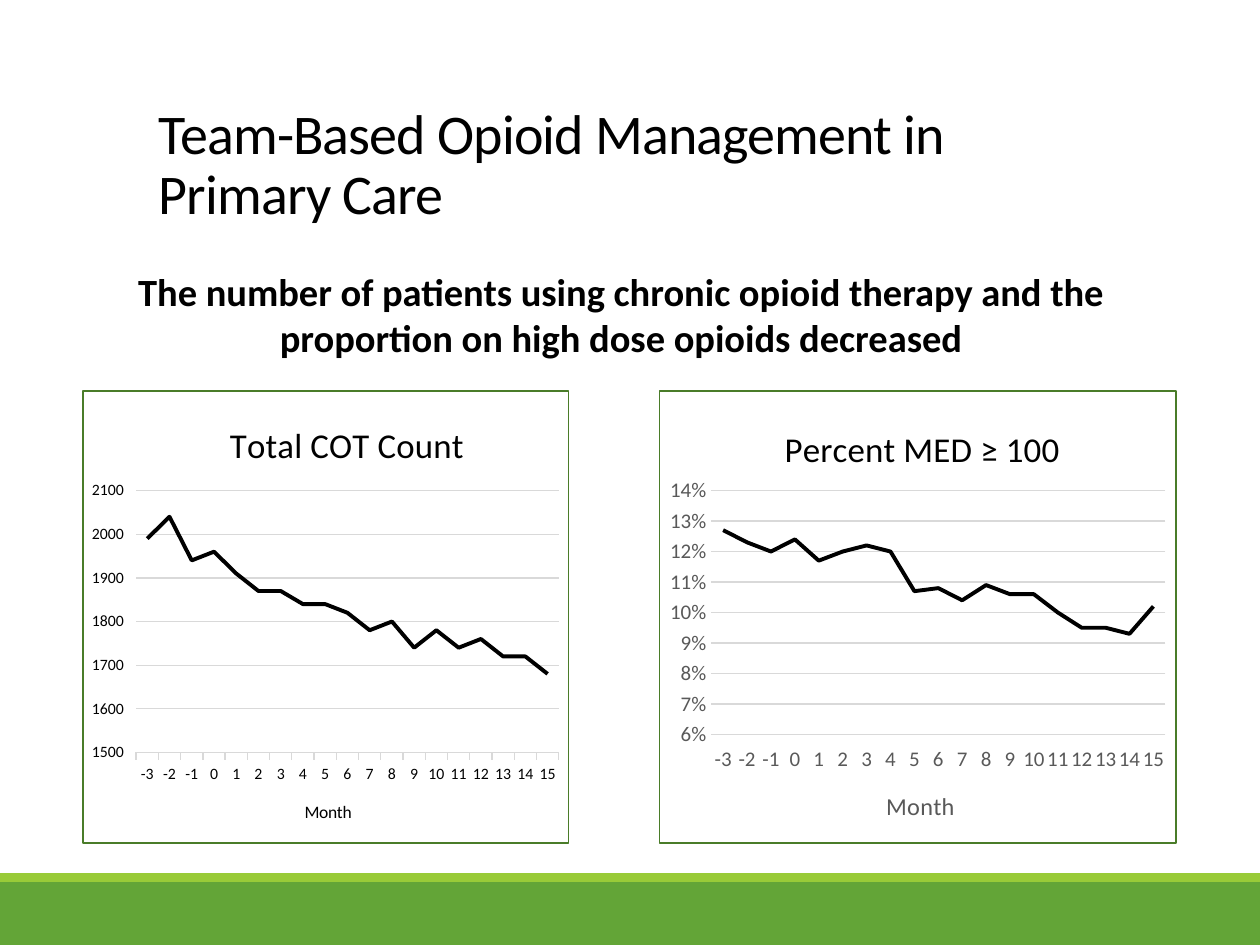
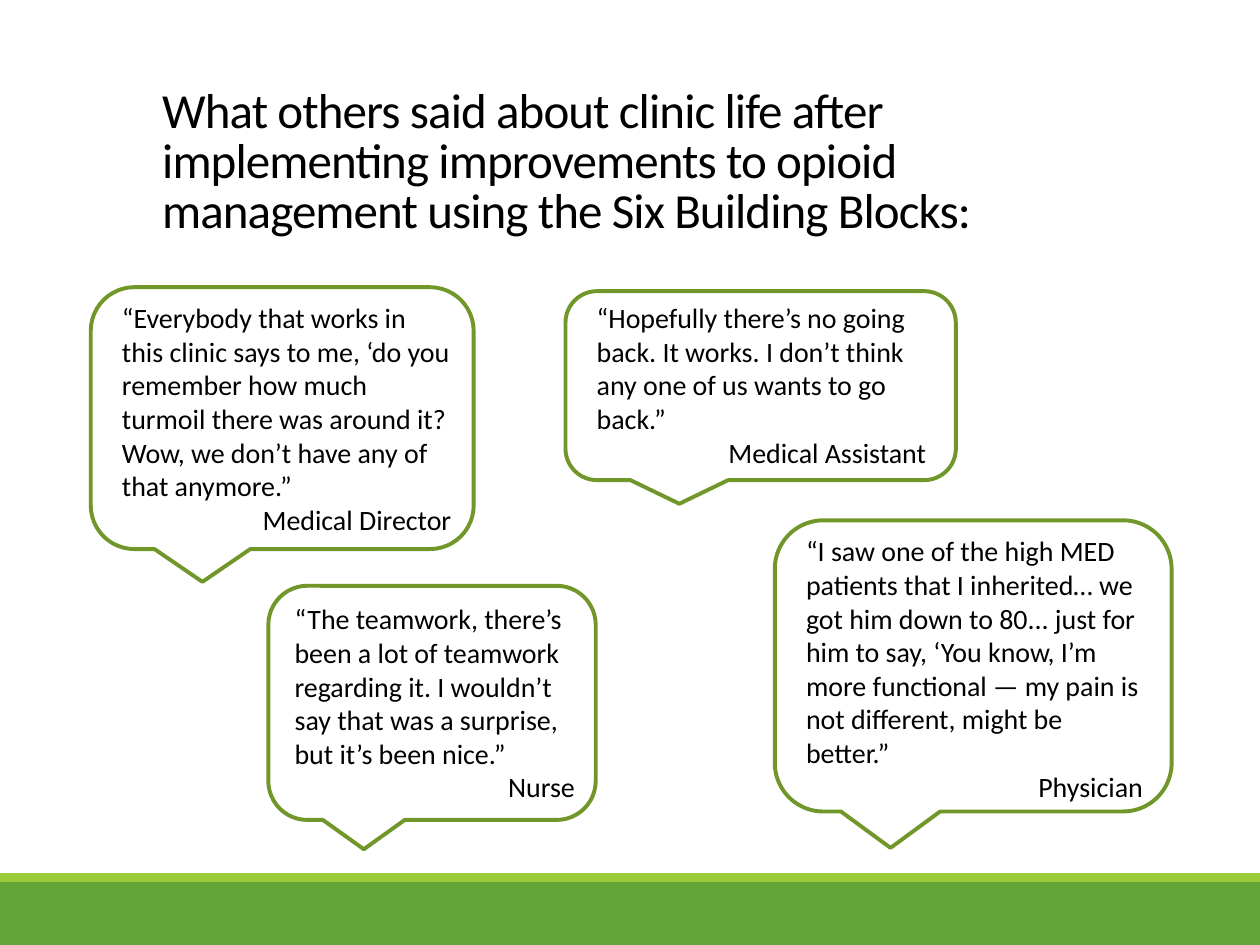
from dataclasses import dataclass

from lxml import etree
from pptx import Presentation
from pptx import util as u
from pptx.chart.data import CategoryChartData
from pptx.dml.color import RGBColor
from pptx.enum import chart as chart_enum
from pptx.enum import shapes, text
from pptx.oxml.ns import nsdecls, qn


class Theme:
    font = "Calibri"
    ink = RGBColor.from_string("000000")
    gray = RGBColor.from_string("595959")
    grid = RGBColor.from_string("D9D9D9")
    band = RGBColor.from_string("63A537")
    strip = RGBColor.from_string("99CB38")
    callout = RGBColor.from_string("719629")
    chart_border = "4A7C29"
    chart_fill = "FFFFFF"
    title_size, long_title_size = 32, 28
    subtitle_size, quote_size = 22, 16
    chart_title_size, chart_size = 20, 10


@dataclass
class Box:
    """A region in centimetres."""
    left: float
    top: float
    width: float
    height: float

    def lengths(self):
        return [u.Cm(v) for v in (self.left, self.top, self.width, self.height)]


@dataclass
class LineChart:
    title: str
    values: list
    low: float
    high: float
    step: float
    number_format: str
    label_size: int
    label_color: RGBColor
    axis_title_size: int
    tick: chart_enum.XL_TICK_MARK
    plot_layout: tuple
    title_layout: tuple
    month_layout: tuple


@dataclass
class Quote:
    words: str
    speaker: str
    box: Box
    inset: tuple
    text_width: float


SLIDE = Box(0, 0, 25.4, 19.05)
MONTHS = [str(month) for month in range(-3, 16)]


def style_font(font, size, color=Theme.ink, bold=False):
    font.name, font.size, font.bold = Theme.font, u.Pt(size), bold
    font.color.rgb = color


def add_text(slide, box, lines, size, bold=False):
    """Text box with one paragraph per (words, alignment) pair."""
    shape = slide.shapes.add_textbox(*box.lengths())
    frame = shape.text_frame
    frame.word_wrap = True
    for index, (words, alignment) in enumerate(lines):
        paragraph = frame.add_paragraph() if index else frame.paragraphs[0]
        paragraph.text = words
        paragraph.alignment = alignment
        style_font(paragraph.font, size, bold=bold)
    return frame


def add_title(slide, box, words, size, spacing, margins):
    frame = add_text(slide, box, [(words, text.PP_ALIGN.LEFT)], size)
    frame.vertical_anchor = text.MSO_ANCHOR.BOTTOM
    frame.margin_left, frame.margin_right = [u.Cm(m) for m in margins]
    paragraph = frame.paragraphs[0]
    paragraph.line_spacing = spacing
    paragraph.font._rPr.set("spc", "-50")  # tightened letters


def add_bands(slide, box):
    """Green footer with a lighter strip on top of it."""
    band_height, strip_height = 1.27, 0.18
    band_top = box.top + box.height - band_height
    for top, height, color in ((band_top, band_height, Theme.band),
                               (band_top - strip_height, strip_height, Theme.strip)):
        part = Box(box.left, top, box.width, height)
        shape = slide.shapes.add_shape(shapes.MSO_SHAPE.RECTANGLE, *part.lengths())
        shape.shadow.inherit = False
        shape.fill.solid()
        shape.fill.fore_color.rgb = color
        shape.line.fill.background()


def set_layout(element, index, fractions, inner=False):
    """Fix a chart part at fractions of the chart: x, y and maybe w, h."""
    for old in element.findall(qn("c:layout")):
        element.remove(old)
    target = '<c:layoutTarget val="inner"/>' if inner else ""
    modes = "".join(f'<c:{name}Mode val="edge"/>' for name in "xy")
    sizes = "".join(f'<c:{name} val="{v}"/>' for name, v in zip("xywh", fractions))
    element.insert(index, etree.fromstring(
        f'<c:layout {nsdecls("c")}><c:manualLayout>{target}{modes}{sizes}'
        '</c:manualLayout></c:layout>'))


def set_chart_title(title, words, size, color, layout):
    paragraph = title.text_frame.paragraphs[0]
    paragraph.text = words
    style_font(paragraph.font, size, color)
    set_layout(title.element, 1, layout)


def frame_chart(chart):
    """White background and green border of the whole chart."""
    chart.element.find(qn("c:chart")).addnext(etree.fromstring(
        f'<c:spPr {nsdecls("c", "a")}>'
        f'<a:solidFill><a:srgbClr val="{Theme.chart_fill}"/></a:solidFill>'
        f'<a:ln w="12700"><a:solidFill><a:srgbClr val="{Theme.chart_border}"/>'
        '</a:solidFill></a:ln></c:spPr>'))


def add_line_chart(slide, box, content):
    data = CategoryChartData()
    data.categories = MONTHS
    data.add_series("Series 1", content.values)
    chart = slide.shapes.add_chart(
        chart_enum.XL_CHART_TYPE.LINE, *box.lengths(), data).chart
    style_font(chart.font, Theme.chart_size)
    frame_chart(chart)
    chart.has_legend = False
    chart.has_title = True
    set_chart_title(chart.chart_title, content.title, Theme.chart_title_size,
                    Theme.ink, content.title_layout)
    set_layout(chart.element.find(".//" + qn("c:plotArea")), 0,
               content.plot_layout, inner=True)

    # Line
    plot = chart.plots[0]
    plot.vary_by_categories = False
    series = plot.series[0]
    series.smooth = False
    series.marker.style = chart_enum.XL_MARKER_STYLE.NONE
    series.format.line.color.rgb = Theme.ink
    series.format.line.width = u.Pt(2.25)

    # Axes
    months, values = chart.category_axis, chart.value_axis
    for axis in (months, values):
        style_font(axis.tick_labels.font, content.label_size, content.label_color)
        axis.major_tick_mark = content.tick
        axis.minor_tick_mark = chart_enum.XL_TICK_MARK.NONE
    months.tick_label_position = chart_enum.XL_TICK_LABEL_POSITION.LOW
    months.has_title = True
    set_chart_title(months.axis_title, "Month", content.axis_title_size,
                    content.label_color, content.month_layout)
    values.minimum_scale, values.maximum_scale = content.low, content.high
    values.major_unit = content.step
    values.tick_labels.number_format = content.number_format
    values.tick_labels.number_format_is_linked = False
    values.has_major_gridlines = True
    for line in (months.format.line, values.major_gridlines.format.line):
        line.color.rgb = Theme.grid
        line.width = u.Pt(0.75)
    values.format.line.fill.background()


def add_quote(slide, quote):
    """Speech bubble with the quotation and its speaker."""
    box = quote.box
    bubble = slide.shapes.add_shape(
        shapes.MSO_SHAPE.ROUNDED_RECTANGULAR_CALLOUT, *box.lengths())
    bubble.shadow.inherit = False
    bubble.fill.background()
    bubble.line.color.rgb = Theme.callout
    bubble.line.width = u.Pt(2.25)
    across, down = quote.inset
    area = Box(box.left + across, box.top + down,
               quote.text_width, box.height - 2 * down)
    frame = add_text(slide, area, [(quote.words, text.PP_ALIGN.LEFT),
                                   (quote.speaker, text.PP_ALIGN.RIGHT)],
                     Theme.quote_size)
    frame.auto_size = text.MSO_AUTO_SIZE.SHAPE_TO_FIT_TEXT


COT_COUNT = LineChart(
    "Total COT Count",
    [1990, 2040, 1940, 1960, 1910, 1870, 1870, 1840, 1840, 1820,
     1780, 1800, 1740, 1780, 1740, 1760, 1720, 1720, 1680],
    1500, 2100, 100, "General", 9, Theme.ink, 10,
    chart_enum.XL_TICK_MARK.OUTSIDE,
    (0.11, 0.22, 0.87, 0.58), (0.29, 0.05), (0.45, 0.9))

HIGH_DOSE = LineChart(
    "Percent MED ≥ 100",
    [0.127, 0.123, 0.12, 0.124, 0.117, 0.12, 0.122, 0.12, 0.107, 0.108,
     0.104, 0.109, 0.106, 0.106, 0.1, 0.095, 0.095, 0.093, 0.102],
    0.06, 0.14, 0.01, "0%", 12, Theme.gray, 14,
    chart_enum.XL_TICK_MARK.NONE,
    (0.1, 0.22, 0.88, 0.54), (0.23, 0.06), (0.43, 0.87))

QUOTES = [
    Quote("“Everybody that works in this clinic says to me, ‘do you remember how much "
          "turmoil there was around it? Wow, we don’t have any of that anymore.”",
          "Medical Director", Box(1.83, 5.79, 7.72, 5.28), (0.38, 0.15), 7.14),
    Quote("“Hopefully there’s no going back. It works. I don’t think any one of us "
          "wants to go back.”",
          "Medical Assistant", Box(11.4, 5.87, 7.87, 3.81), (0.38, 0.07), 7.14),
    Quote("“The teamwork, there’s been a lot of teamwork regarding it. I wouldn’t say "
          "that was a surprise, but it’s been nice.”",
          "Nurse", Box(5.41, 11.81, 6.6, 4.72), (0.28, 0.2), 6.15),
    Quote("“I saw one of the high MED patients that I inherited… we got him down to "
          "80... just for him to say, ‘You know, I’m more functional — my pain is not "
          "different, might be better.”",
          "Physician", Box(15.62, 10.49, 8, 5.87), (0.38, 0.15), 7.29),
]


def build_results_slide(slide, box):
    add_bands(slide, box)
    add_title(slide, Box(3.02, 3.4, 19, 1.3),
              "Team-Based Opioid Management in Primary Care",
              Theme.title_size, 0.9, (0.18, 0.18))
    add_text(slide, Box(1.65, 5.28, 21.74, 2.13),
             [("The number of patients using chronic opioid therapy and the proportion "
               "on high dose opioids decreased", text.PP_ALIGN.CENTER)],
             Theme.subtitle_size, bold=True)
    chart_top, chart_height = 7.87, 9.14
    for left, width, content in ((13.28, 10.44, HIGH_DOSE), (1.65, 9.83, COT_COUNT)):
        add_line_chart(slide, Box(left, chart_top, width, chart_height), content)


def build_quotes_slide(slide, box):
    add_bands(slide, box)
    add_title(slide, Box(3.02, 2.95, 20.57, 1.98),
              "What others said about clinic life after implementing improvements to "
              "opioid management using the Six Building Blocks:",
              Theme.long_title_size, 0.85, (0.25, 0.6))
    for quote in QUOTES:
        add_quote(slide, quote)


def main():
    presentation = Presentation()
    presentation.slide_width = u.Cm(SLIDE.width)
    presentation.slide_height = u.Cm(SLIDE.height)
    blank = presentation.slide_layouts[6]
    for build in (build_results_slide, build_quotes_slide):
        build(presentation.slides.add_slide(blank), SLIDE)
    presentation.save("out.pptx")


if __name__ == "__main__":
    main()
